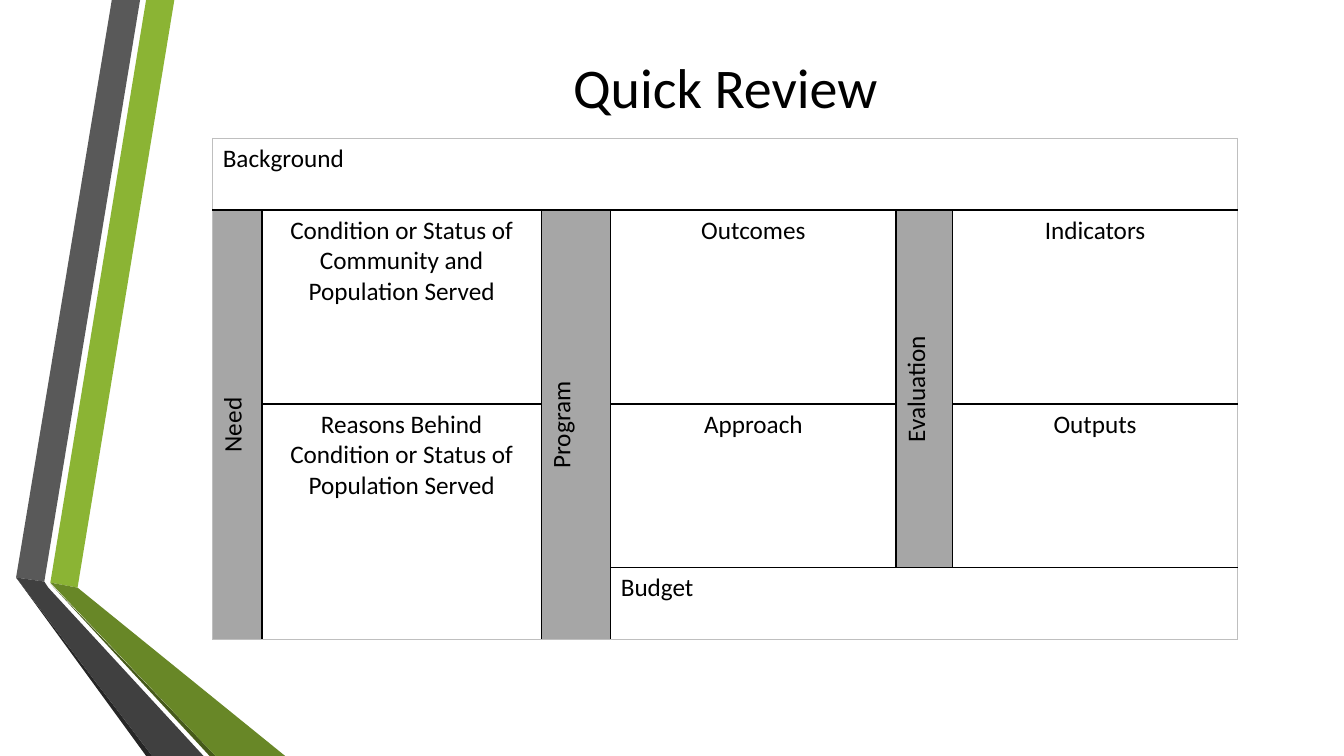
"""Build the Quick Review slide with its program planning table."""
from itertools import product
from pptx import Presentation
from pptx.dml.color import RGBColor as Rgb
from pptx.enum.text import MSO_ANCHOR as Anchor, PP_ALIGN as Align
from pptx.oxml import parse_xml as to_xml
from pptx.oxml.ns import nsdecls
from pptx.util import Pt

BANDS = [
    ("8BB434", [(36, 416.16), (55.44, 419.76), (124.56, 0), (104.4, 0)]),
    ("595959", [(100.08, 0), (79.92, 0), (11.52, 412.56), (31.68, 415.44)]),
    ("262626", [(11.52, 412.56), (104.4, 540), (108.72, 540)]),
    ("465A1A", [(36, 416.88), (149.76, 540), (154.08, 540)]),
    ("688727", [(36, 416.16), (154.08, 540), (203.76, 540), (55.44, 419.76)]),
    ("404040", [(145.44, 540), (34.56, 419.76), (31.68, 415.44),
                (11.52, 412.56), (108.72, 540)]),
]
COLS = [35.28, 199.44, 49.68, 203.76, 40.32, 203.76]
ROWS = [51.4, 138.6, 117, 51.4]
CELLS = [
    (0, 0, 1, 6, "Background", "left"),
    (1, 0, 3, 1, "Need", "side"),
    (1, 1, 1, 1, "Condition or Status of Community and Population Served", "mid"),
    (2, 1, 2, 1, "Reasons Behind Condition or Status of Population Served", "mid"),
    (1, 2, 3, 1, "Program", "side"),
    (1, 3, 1, 1, "Outcomes", "mid"),
    (2, 3, 1, 1, "Approach", "mid"),
    (1, 4, 2, 1, "Evaluation", "side"),
    (1, 5, 1, 1, "Indicators", "mid"),
    (2, 5, 1, 1, "Outputs", "mid"),
    (3, 3, 1, 3, "Budget", "left"),
]


def tint(code):
    return Rgb.from_string(code)


class Deck:
    def __init__(self):
        self.show = Presentation()
        self.show.slide_width, self.show.slide_height = Pt(960), Pt(540)
        self.page = self.show.slides.add_slide(self.show.slide_layouts[6])
        self.font = {"name": "Calibri", "size": Pt(18)}

    def label(self, frame, text, align, **style):
        para = frame.paragraphs[0]
        para.alignment = align
        run = para.add_run()
        run.text = text
        for key, value in {**self.font, **style}.items():
            setattr(run.font, key, value)
        run.font.color.rgb = tint("000000")

    def band(self, color, points):
        first, *rest = [(Pt(x), Pt(y)) for x, y in points]
        pen = self.page.shapes.build_freeform(*first)
        pen.add_line_segments(rest, close=True)
        shape = pen.convert_to_shape()
        shape.shadow.inherit = False
        shape.fill.solid()
        shape.fill.fore_color.rgb = tint(color)
        shape.line.fill.background()

    def title(self, text, *box):
        frame = self.page.shapes.add_textbox(*map(Pt, box)).text_frame
        look = {"word_wrap": True, "vertical_anchor": Anchor.MIDDLE}
        for key, value in look.items():
            setattr(frame, key, value)
        self.label(frame, text, Align.CENTER, size=Pt(40))

    def edge(self, cell, side, color, width):
        cell._tc.get_or_add_tcPr().append(to_xml(
            f'<a:ln{side} {nsdecls("a")} w="{Pt(width)}"><a:solidFill>'
            f'<a:srgbClr val="{color}"/></a:solidFill></a:ln{side}>'))

    def cell(self, grid, row, col, high, wide, text, kind):
        end, stop = row + high, col + wide
        rims = {"L": col == 0, "R": stop == len(COLS),
                "T": row == 0, "B": end == len(ROWS)}
        heavy = {"T": row == 1, "B": end == 1}
        for r, c in product(range(row, end), range(col, stop)):
            part = grid.cell(r, c)
            for side, rim in rims.items():
                color, width = ("BFBFBF", 0.5) if rim else ("000000", 1)
                self.edge(part, side, color, 1.5 if heavy.get(side) else width)
            if kind == "side":
                part._tc.tcPr.set("vert", "vert270")
                part.fill.solid()
                part.fill.fore_color.rgb = tint("A6A6A6")
            else:
                part.fill.background()
        cell = grid.cell(row, col)
        if high * wide > 1:
            cell.merge(grid.cell(end - 1, stop - 1))
        align = Align.LEFT if kind == "left" else Align.CENTER
        self.label(cell.text_frame, text, align)

    def table(self, left, top):
        grid = self.page.shapes.add_table(
            len(ROWS), len(COLS), Pt(left), Pt(top),
            Pt(sum(COLS)), Pt(sum(ROWS))).table
        grid.first_row = grid.horz_banding = False
        for col, width in zip(grid.columns, COLS):
            col.width = Pt(width)
        for row, height in zip(grid.rows, ROWS):
            row.height = Pt(height)
        for item in CELLS:
            self.cell(grid, *item)


def main():
    deck = Deck()
    for color, points in BANDS:
        deck.band(color, points)
    deck.title("Quick Review", 151.92, 24.48, 732.24, 74.16)
    deck.table(151.92, 98.64)
    deck.show.save("out.pptx")


if __name__ == "__main__":
    main()
